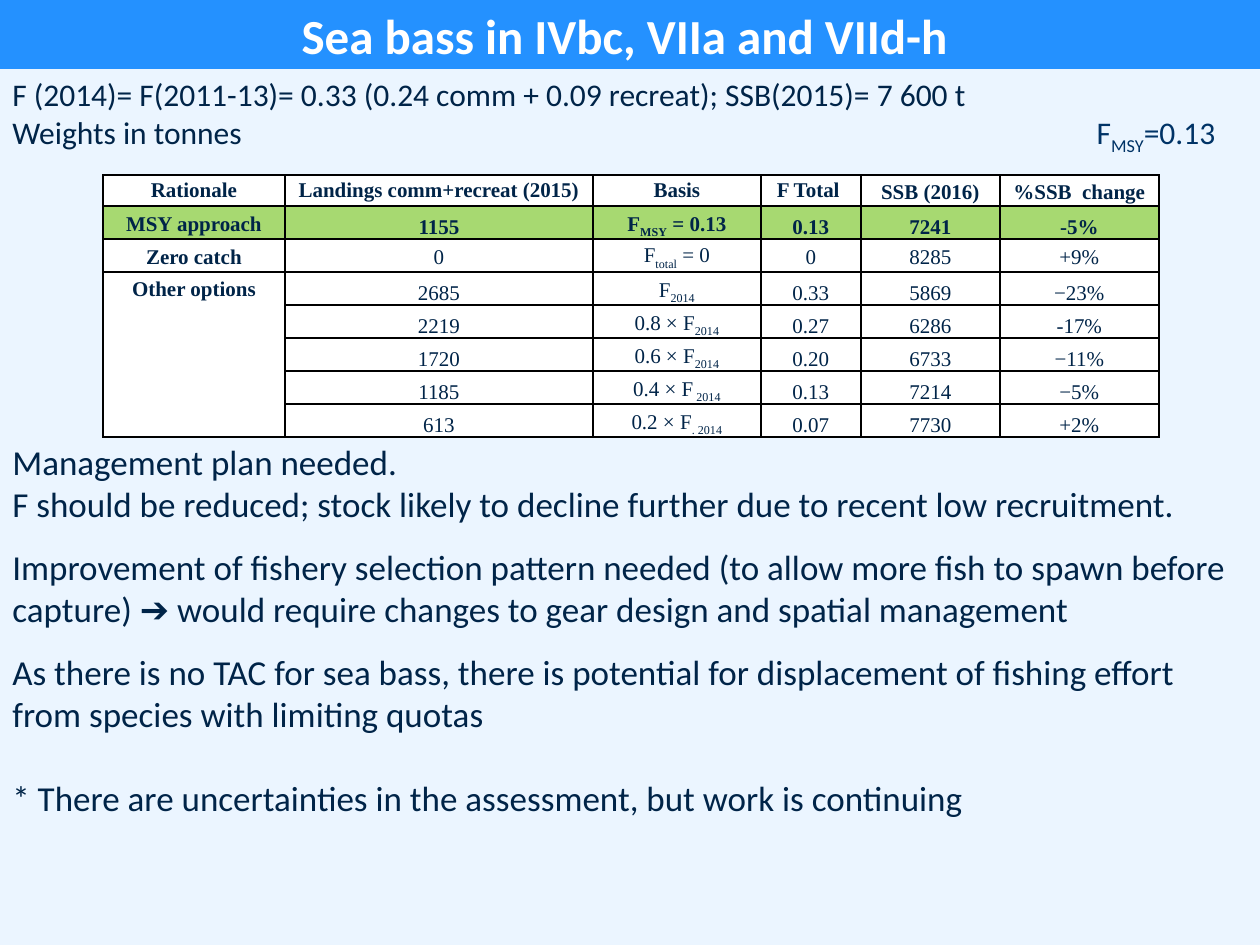
from lxml import etree
from pptx import Presentation
from pptx import util as u
from pptx.dml.color import RGBColor
from pptx.enum import shapes, text
from pptx.oxml.ns import qn

PX = 914400 // 126
COLORS = {"page": "EBF5FF", "banner": "2491FF", "white": "FFFFFF", "ink": "002448",
          "target": "003366", "advice": "A7D971", "border": "000000"}


def write(para, content, size, color="ink", font="Calibri", bold=False):
    """Append text to a paragraph; parts between bars become subscripts."""
    for index, part in enumerate(content.split("|")):
        if not part:
            continue
        span = para.add_run()
        span.text = part
        span.font.size = u.Pt(size)
        span.font.name = font
        span.font.bold = bold
        span.font.color.rgb = RGBColor.from_string(COLORS[color])
        if index % 2:
            span._r.get_or_add_rPr().set("baseline", "-25000")


def add_text(page, left, top, width, height):
    box = page.shapes.add_textbox(left * PX, top * PX, width * PX, height * PX)
    box.text_frame.word_wrap = True
    return box.text_frame


deck = Presentation()
deck.slide_width, deck.slide_height = 1260 * PX, 945 * PX
page = deck.slides.add_slide(deck.slide_layouts[6])
page.background.fill.solid()
page.background.fill.fore_color.rgb = RGBColor.from_string(COLORS["page"])

# Title banner
banner = page.shapes.add_shape(shapes.MSO_SHAPE.RECTANGLE, 0, 0, 1260 * PX, 69 * PX)
banner.shadow.inherit = False
banner.fill.solid()
banner.fill.fore_color.rgb = RGBColor.from_string(COLORS["banner"])
banner.line.fill.background()
banner.text_frame.vertical_anchor = text.MSO_ANCHOR.MIDDLE
title = banner.text_frame.paragraphs[0]
title.alignment = text.PP_ALIGN.CENTER
write(title, "Sea bass in IVbc, VIIa and VIId-h ", 28, "white", bold=True)

# Assumptions, with the target F at a right tab
assumptions = add_text(page, 0, 69, 1260, 89)
write(assumptions.paragraphs[0],
      "F (2014)= F(2011-13)= 0.33 (0.24 comm + 0.09 recreat); SSB(2015)= 7 600 t", 18)
units = assumptions.add_paragraph()
tabs = etree.SubElement(units._p.get_or_add_pPr(), qn("a:tabLst"))
etree.SubElement(tabs, qn("a:tab"), pos=str(1203 * PX), algn="r")
write(units, "Weights in tonnes\t", 18)
write(units, "F|MSY|=0.13", 18, "target")

# Conclusions: text and space before in points
conclusions = [
    ("Management plan needed.", 0),
    ("F should be reduced; stock likely to decline further due to recent low recruitment.", 0),
    ("Improvement of fishery selection pattern needed (to allow more fish to spawn before "
     "capture) ➔ would require changes to gear design and spatial management", 12),
    ("As there is no TAC for sea bass, there is potential for displacement of fishing effort "
     "from species with limiting quotas", 12),
    ("* There are uncertainties in the assessment, but work is continuing", 24),
]
frame = add_text(page, 0, 434, 1261, 394)
for index, (sentence, gap) in enumerate(conclusions):
    para = frame.add_paragraph() if index else frame.paragraphs[0]
    if gap:
        para.space_before = u.Pt(gap)
    write(para, sentence, 20)

# Catch options table
options = [
    ["Rationale", "Landings comm+recreat (2015)", "Basis", "F Total ", "SSB (2016)", "%SSB  change"],
    ["MSY approach", "1155", "F|MSY| = 0.13", "0.13", "7241", "-5%"],
    ["Zero catch", "0", "F|total| = 0", "0", "8285", "+9%"],
    ["Other options", "2685", "F|2014|", "0.33", "5869", "−23%"],
    ["", "2219", "0.8 × F|2014|", "0.27", "6286", "-17%"],
    ["", "1720", "0.6 × F|2014|", "0.20", "6733", "−11%"],
    ["", "1185", "0.4 × F| 2014|", "0.13", "7214", "−5%"],
    ["", "613", "0.2 × F|. 2014|", "0.07", "7730", "+2%"],
]
widths = [182, 308, 168, 100, 139, 159]
heights = [29] + [33] * 7
table = page.shapes.add_table(len(options), len(widths), 103 * PX, 175 * PX,
                              sum(widths) * PX, sum(heights) * PX).table
table.first_row = table.horz_banding = False
for column, width in zip(table.columns, widths):
    column.width = width * PX
for row, height in zip(table.rows, heights):
    row.height = height * PX
table.cell(3, 0).merge(table.cell(7, 0))

for r, values in enumerate(options):
    for c, value in enumerate(values):
        cell = table.cell(r, c)
        cell.margin_left = cell.margin_right = 9 * PX
        cell.margin_top = cell.margin_bottom = 0
        if r == 0 or (r, c) == (3, 0):
            cell.vertical_anchor = text.MSO_ANCHOR.TOP
            cell.margin_top = 2 * PX if c >= 4 or r == 3 else 0
        elif r == 2 or c == 0:
            cell.vertical_anchor = text.MSO_ANCHOR.MIDDLE
        else:
            cell.vertical_anchor = text.MSO_ANCHOR.BOTTOM
        para = cell.text_frame.paragraphs[0]
        para.alignment = text.PP_ALIGN.CENTER
        para.line_spacing = 1.15
        write(para, value, 12, font="Times New Roman", bold=r < 2 or c == 0)

        # Borders come before the fill in the cell properties
        properties = cell._tc.get_or_add_tcPr()
        for side in ("lnL", "lnR", "lnT", "lnB"):
            line = etree.SubElement(properties, qn("a:" + side), w="12700")
            solid = etree.SubElement(line, qn("a:solidFill"))
            etree.SubElement(solid, qn("a:srgbClr"), val=COLORS["border"])
        cell.fill.solid()
        cell.fill.fore_color.rgb = RGBColor.from_string(COLORS["advice" if r == 1 else "white"])

deck.save("out.pptx")
